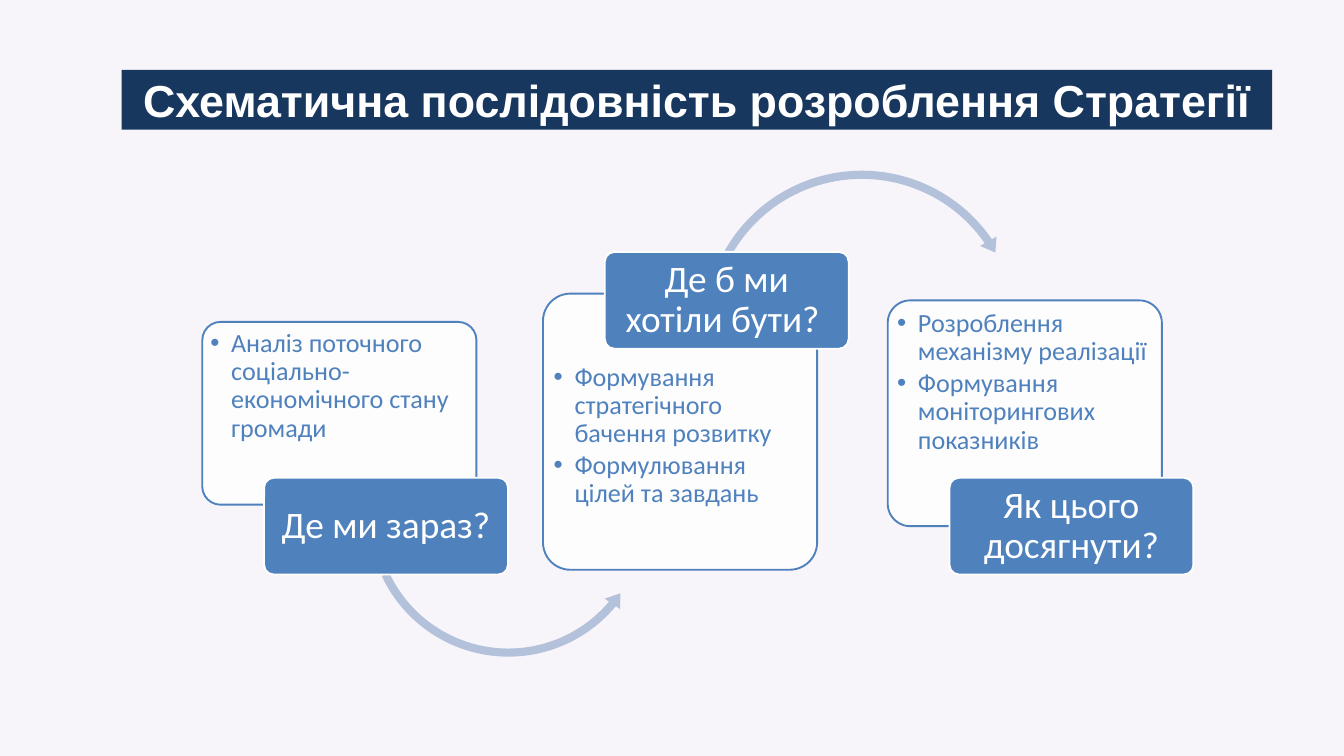
"""Build the slide with the three-step sequence of strategy development."""
import pptx
import pptx.dml.color
import pptx.enum.shapes
import pptx.enum.text
import pptx.oxml
import pptx.oxml.ns
import pptx.util
from lxml import etree

COLORS = {
    "background": "F7F4FA",
    "banner": "17375E",
    "blue": "4F81BD",
    "arrow": "B3C1DB",
    "white": "FFFFFF",
}
SHAPES = pptx.enum.shapes.MSO_SHAPE
ANCHOR = pptx.enum.text.MSO_ANCHOR
ALIGN = pptx.enum.text.PP_ALIGN
qn = pptx.oxml.ns.qn

presentation = pptx.Presentation()
presentation.slide_width = pptx.util.Inches(20)
presentation.slide_height = pptx.util.Inches(11.25)
column = presentation.slide_width / 100
row = presentation.slide_height / 100


def add_block(kind, box, fill, line=None):
    left, top, width, height = box
    shape = slide.shapes.add_shape(
        kind, int(left * column), int(top * row), int(width * column), int(height * row))
    shape.shadow.inherit = False
    shape.fill.solid()
    shape.fill.fore_color.rgb = pptx.dml.color.RGBColor.from_string(COLORS[fill])
    if line:
        shape.line.color.rgb = pptx.dml.color.RGBColor.from_string(COLORS[line])
        shape.line.width = pptx.util.Pt(2)
    else:
        shape.line.fill.background()
    return shape


def format_text(shape, lines, size, color, font, anchor, align, insets, bold=False):
    frame = shape.text_frame
    frame.text = "\n".join(lines)
    frame.word_wrap = True
    frame.auto_size = pptx.enum.text.MSO_AUTO_SIZE.NONE
    frame.vertical_anchor = anchor
    frame.margin_left = frame.margin_right = pptx.util.Inches(insets[0])
    frame.margin_top = frame.margin_bottom = pptx.util.Inches(insets[1])
    for paragraph in frame.paragraphs:
        paragraph.alignment = align
        paragraph.space_before = pptx.util.Pt(0)
        for run in paragraph.runs:
            run.font.size = pptx.util.Pt(size)
            run.font.name = font
            run.font.bold = bold
            run.font.color.rgb = pptx.dml.color.RGBColor.from_string(COLORS[color])


slide = presentation.slides.add_slide(presentation.slide_layouts.get_by_name("Comparison"))
slide.background.fill.solid()
slide.background.fill.fore_color.rgb = pptx.dml.color.RGBColor.from_string(COLORS["background"])
title, *bodies = slide.placeholders
spare = bodies.pop()
spare.element.getparent().remove(spare.element)

steps = [
    {
        "card": (15.05, 42.58, 20.4, 24.18),
        "body": (15.35, 43.11, 19.75, 17.87),
        "label_top": 63.2,
        "label": "Де ми зараз?",
        "items": ["Аналіз поточного соціально-економічного стану громади"],
        "arrow": (SHAPES.LEFT_CIRCULAR_ARROW, (27.05, 49.24, 21.55, 38.31),
                  (0.028, 3.384, 23.903, 93.009, 0.032)),
    },
    {
        "card": (40.4, 38.84, 20.4, 36.53),
        "body": (40.9, 47.56, 19.45, 27.02),
        "label_top": 33.33,
        "label": "Де б ми хотіли бути? ",
        "items": ["Формування стратегічного бачення розвитку", "Формулювання цілей та завдань"],
        "arrow": (SHAPES.CIRCULAR_ARROW, (52, 21.87, 24.25, 43.11),
                  (0.025, 2.987, 195.28, 125.778, 0.029)),
    },
    {
        "card": (66.05, 39.73, 20.4, 29.87),
        "body": (66.45, 40.44, 19.6, 22.13),
        "label_top": 63.2,
        "label": "Як цього досягнути?",
        "items": ["Розроблення механізму реалізації", "Формування моніторингових показників"],
        "arrow": None,
    },
]

for step, body in zip(steps, bodies):
    card = add_block(SHAPES.ROUNDED_RECTANGLE, step["card"], "white", "blue")
    card.adjustments[0] = 0.1
    card_color = card.element.spPr.find(qn("a:solidFill")).find(qn("a:srgbClr"))
    etree.SubElement(card_color, qn("a:alpha"), val="90000")

    left, top, width, height = step["body"]
    body.left, body.top = int(left * column), int(top * row)
    body.width, body.height = int(width * column), int(height * row)
    format_text(body, step["items"], 28, "blue", "Calibri", ANCHOR.TOP, ALIGN.LEFT, (0.06, 0.06))
    for paragraph in body.text_frame.paragraphs:
        paragraph.line_spacing = 0.9
        paragraph.space_after = pptx.util.Pt(4.2)
        properties = paragraph._p.get_or_add_pPr()
        properties.set("marL", str(pptx.util.Inches(0.31)))
        properties.set("indent", str(-pptx.util.Inches(0.31)))
        etree.SubElement(properties, qn("a:buFont"), typeface="Arial")
        etree.SubElement(properties, qn("a:buChar"), char="•")
    slide.shapes.element.append(body.element)

    if step["arrow"]:
        kind, box, adjustments = step["arrow"]
        arrow = add_block(kind, box, "arrow")
        for index, value in enumerate(adjustments):
            arrow.adjustments[index] = value

    label_box = (step["card"][0] + 4.6, step["label_top"], 18.15, 12.8)
    label = add_block(SHAPES.ROUNDED_RECTANGLE, label_box, "blue", "white")
    label.adjustments[0] = 0.1
    format_text(label, [step["label"]], 40, "white", "Calibri",
                ANCHOR.MIDDLE, ALIGN.CENTER, (0.08, 0.06))
    label.text_frame.paragraphs[0].line_spacing = 0.9

title.left, title.top = int(9.05 * column), int(9.24 * row)
title.width, title.height = int(85.6 * column), int(7.91 * row)
title.fill.solid()
title.fill.fore_color.rgb = pptx.dml.color.RGBColor.from_string(COLORS["banner"])
format_text(title, ["Схематична послідовність розроблення Стратегії"], 48, "white", "Arial",
            ANCHOR.TOP, ALIGN.CENTER, (0.1, 0.05), bold=True)
slide.shapes.element.append(title.element)

presentation.save("out.pptx")
